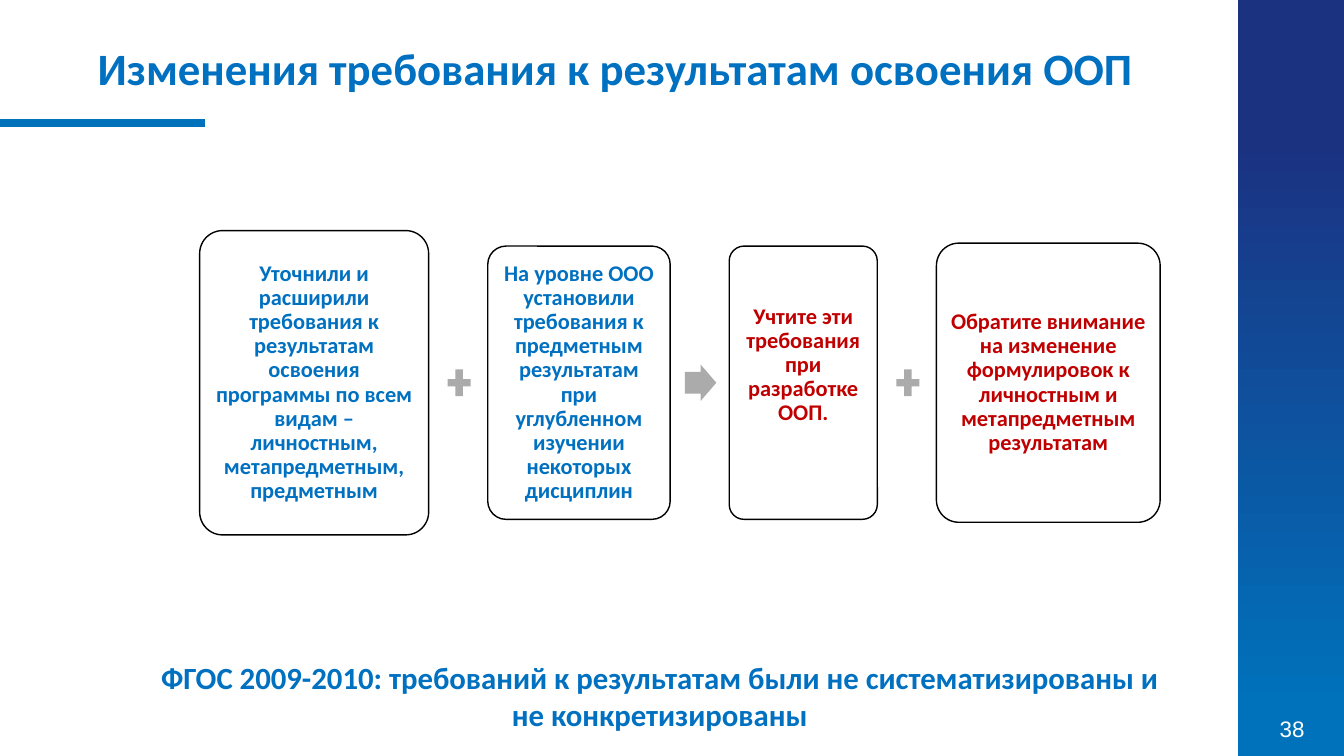
"""Builds the slide on changed requirements for programme results."""
import pptx
import pptx.dml.color
import pptx.enum.shapes
import pptx.enum.text
import pptx.oxml
import pptx.util
from dataclasses import dataclass

Pt = pptx.util.Pt
SHAPE = pptx.enum.shapes.MSO_SHAPE
ALIGN = pptx.enum.text.PP_ALIGN
ANCHOR = pptx.enum.text.MSO_ANCHOR
EMPTY_EFFECTS = '<a:effectLst xmlns:a="http://schemas.openxmlformats.org/drawingml/2006/main"/>'


@dataclass(frozen=True)
class Theme:
    text: str = "0070C0"
    accent: str = "C00000"
    bar: str = "0072BC"
    bar_dark: str = "1B3281"
    operator: str = "ABABAB"
    outline: str = "000000"
    white: str = "FFFFFF"
    font: str = "Calibri"
    number_font: str = "Arial"
    title_size: int = 32
    note_size: int = 22
    card_size: int = 16
    number_size: int = 16


def rgb(value):
    return pptx.dml.color.RGBColor.from_string(value)


class Deck:
    def __init__(self, theme):
        self.theme = theme
        self.prs = pptx.Presentation()
        self.prs.slide_width, self.prs.slide_height = Pt(960), Pt(540)
        self.s = self.prs.slides.add_slide(self.prs.slide_layouts[5])

    def add_text(self, sp, text, size, color, align=ALIGN.CENTER, anchor=ANCHOR.MIDDLE,
                 bold=True, font=None, spacing=1.0):
        tf = sp.text_frame
        tf.word_wrap = True
        tf.auto_size = pptx.enum.text.MSO_AUTO_SIZE.NONE
        tf.vertical_anchor = anchor
        p = tf.paragraphs[0]
        p.alignment, p.line_spacing = align, spacing
        r = p.add_run()
        r.text = text
        r.font.name, r.font.size, r.font.bold = font or self.theme.font, Pt(size), bold
        r.font.color.rgb = rgb(color)

    def title(self, text, x, y, w, h):
        sp = self.s.shapes.title
        sp.left, sp.top, sp.width, sp.height = Pt(x), Pt(y), Pt(w), Pt(h)
        self.add_text(sp, text, self.theme.title_size, self.theme.text, ALIGN.LEFT)

    def text(self, text, x, y, w, h, size, color, **style):
        sp = self.s.shapes.add_textbox(Pt(x), Pt(y), Pt(w), Pt(h))
        self.add_text(sp, text, size, color, **style)

    def shape(self, kind, x, y, w, h, fill=None):
        sp = self.s.shapes.add_shape(kind, Pt(x), Pt(y), Pt(w), Pt(h))
        sp.shadow.inherit = False
        sp.line.fill.background()
        if fill:
            sp.fill.solid()
            sp.fill.fore_color.rgb = rgb(fill)
        return sp

    def side_band(self, x, w):
        sp = self.shape(SHAPE.RECTANGLE, x, 0, w, 540)
        sp.fill.gradient()
        sp.fill.gradient_angle = 90
        stops = ((0.06, self.theme.bar), (0.82, self.theme.bar_dark))
        for stop, (position, color) in zip(sp.fill.gradient_stops, stops):
            stop.position = position
            stop.color.rgb = rgb(color)

    def rule(self, x1, x2, y, width):
        line = self.s.shapes.add_connector(
            pptx.enum.shapes.MSO_CONNECTOR.STRAIGHT, Pt(x1), Pt(y), Pt(x2), Pt(y))
        line.line.color.rgb = rgb(self.theme.bar)
        line.line.width = Pt(width)
        line._element.spPr.append(pptx.oxml.parse_xml(EMPTY_EFFECTS))

    def card(self, text, x, y, w, h, color, lift):
        sp = self.shape(SHAPE.ROUNDED_RECTANGLE, x, y, w, h, self.theme.white)
        sp.adjustments[0] = 0.1
        sp.line.color.rgb = rgb(self.theme.outline)
        sp.line.width = Pt(1)
        tf = sp.text_frame
        tf.margin_left = tf.margin_right = tf.margin_top = Pt(5)
        tf.margin_bottom = Pt(5 + 2 * lift)
        self.add_text(sp, text, self.theme.card_size, color, spacing=0.9)

    def operator(self, kind, x, middle):
        sp = self.shape(kind, x, middle - 13, 22.4, 26, self.theme.operator)
        if kind == SHAPE.RIGHT_ARROW:
            sp.adjustments[0] = 0.6


def main():
    theme = Theme()
    deck = Deck(theme)
    deck.side_band(884.4, 75.6)
    deck.text("38", 894, 505.5, 58, 29.5, theme.number_size, theme.white,
              bold=False, font=theme.number_font)
    deck.rule(0, 146.4, 87.8, 6)
    deck.title("Изменения требования к результатам освоения ООП", 62.6, 25.2, 818, 46)
    deck.text("ФГОС 2009-2010: требований к результатам были не систематизированы "
              "и не конкретизированы", 105.8, 467.3, 731, 62,
              theme.note_size, theme.text, anchor=ANCHOR.TOP)

    cards = [
        ("Уточнили и расширили требования к результатам освоения программы по всем "
         "видам – личностным, метапредметным, предметным",
         163.6, 217.4, theme.text, 0, SHAPE.MATH_PLUS),
        ("На уровне ООО установили требования к предметным результатам "
         "при углубленном изучении некоторых дисциплин",
         130.3, 195.2, theme.text, 0, SHAPE.RIGHT_ARROW),
        ("Учтите эти требования при разработке ООП.",
         105.8, 195.2, theme.accent, 12.5, SHAPE.MATH_PLUS),
        ("Обратите внимание на изменение формулировок к личностным "
         "и метапредметным результатам",
         159.8, 199.4, theme.accent, 0, None),
    ]
    x, middle, gap = 142.6, 273.4, 42.2
    for text, w, h, color, lift, operator in cards:
        deck.card(text, x, middle - h / 2, w, h, color, lift)
        if operator:
            deck.operator(operator, x + w + 10.6, middle)
        x += w + gap
    deck.prs.save("out.pptx")


if __name__ == "__main__":
    main()
